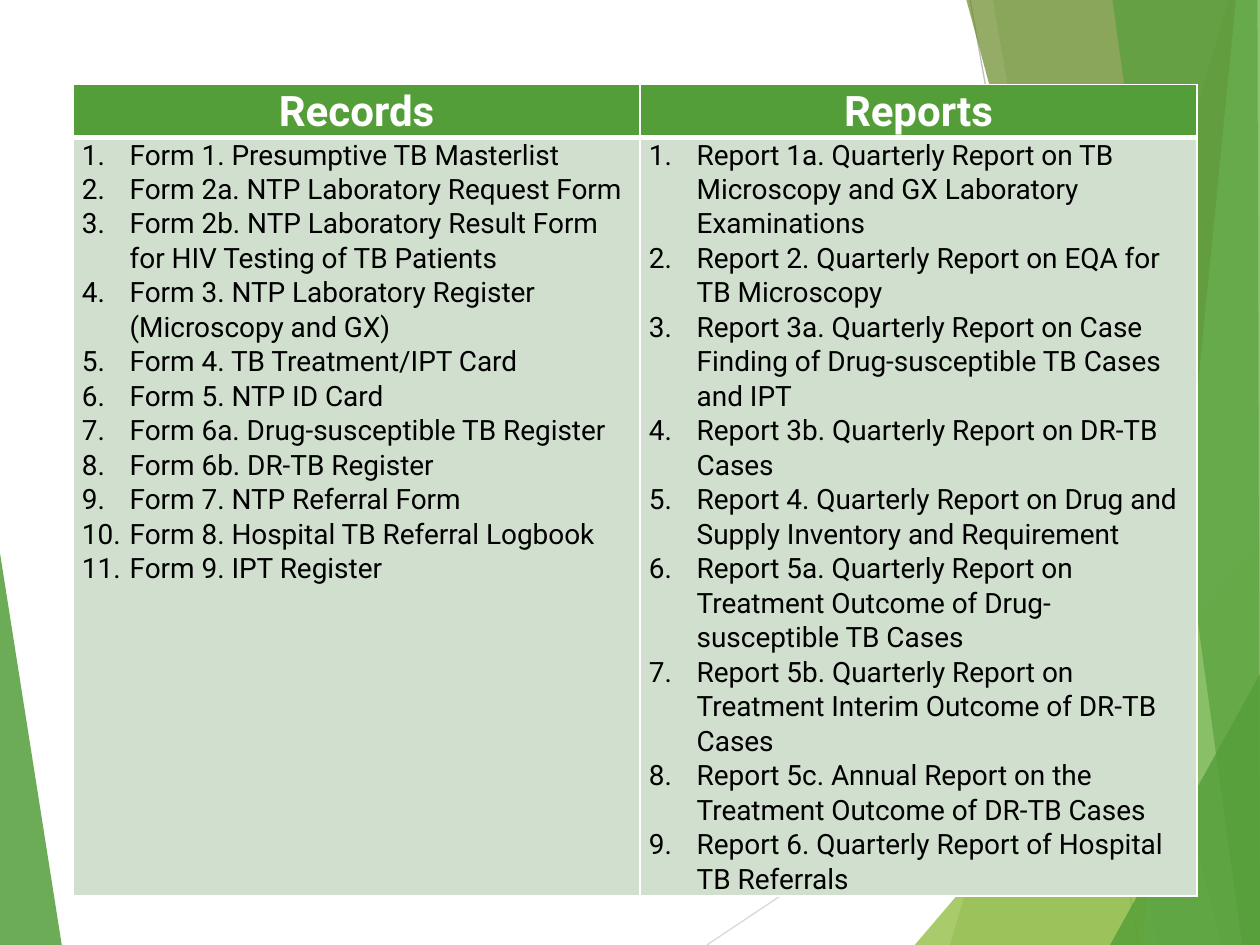
from lxml import etree
from pptx import Presentation
from pptx import util as u
from pptx.dml.color import RGBColor
from pptx.enum import shapes, text
from pptx.oxml.ns import qn

WIDTH, HEIGHT = 10, 7.5
FONT, WHITE = "Roboto", "FFFFFF"

# Content: column heading -> numbered entries
COLUMNS = {
    "Records": [
        "Form 1. Presumptive TB Masterlist",
        "Form 2a. NTP Laboratory Request Form",
        "Form 2b. NTP Laboratory Result Form for HIV Testing of TB Patients",
        "Form 3. NTP Laboratory Register (Microscopy and GX)",
        "Form 4. TB Treatment/IPT Card",
        "Form 5. NTP ID Card",
        "Form 6a. Drug-susceptible TB Register",
        "Form 6b. DR-TB Register",
        "Form 7. NTP Referral Form",
        "Form 8. Hospital TB Referral Logbook",
        "Form 9. IPT Register",
    ],
    "Reports": [
        "Report 1a. Quarterly Report on TB Microscopy and GX Laboratory Examinations",
        "Report 2. Quarterly Report on EQA for TB Microscopy",
        "Report 3a. Quarterly Report on Case Finding of Drug-susceptible TB Cases and IPT",
        "Report 3b. Quarterly Report on DR-TB Cases",
        "Report 4. Quarterly Report on Drug and Supply Inventory and Requirement",
        "Report 5a. Quarterly Report on Treatment Outcome of Drug- susceptible TB Cases",
        "Report 5b. Quarterly Report on Treatment Interim Outcome of DR-TB Cases",
        "Report 5c. Annual Report on the Treatment Outcome of DR-TB Cases",
        "Report 6. Quarterly Report of Hospital TB Referrals",
    ],
}
TABLE_LEFT, TABLE_TOP = 0.58, 0.67
COLUMN_WIDTHS, ROW_HEIGHTS = (4.5, 4.42), (0.4, 6.02)

# Row formats; borders are points for left, right, top, bottom
HEADER = dict(font=dict(size=u.Pt(24), bold=True), color=WHITE, fill="549E39",
              spacing=1.07, borders=(1, 1, 1, 3))
BODY = dict(font=dict(size=u.Pt(16), bold=False), color="000000", fill="D1DFCE",
            spacing=1.06, borders=(1, 1, 3, 1))

# Background facets: colour, opacity in percent, corners in inches
LEFT_FACET = ("549E39", 85, [(0, 4.39), (0.49, HEIGHT), (0, HEIGHT)])
RIGHT_FACETS = [
    ("549E39", 30, [(9.75, 0), (7.54, HEIGHT), (WIDTH, HEIGHT), (WIDTH, 0)]),
    ("549E39", 20, [(7.88, 0), (9.19, HEIGHT), (WIDTH, HEIGHT), (WIDTH, 0)]),
    ("8AB833", 72, [(7.26, HEIGHT), (WIDTH, 4.29), (WIDTH, HEIGHT)]),
    ("678A26", 70, [(7.67, 0), (9.7, HEIGHT), (WIDTH, HEIGHT), (WIDTH, 0)]),
    ("93D07D", 70, [(9.81, 0), (9.07, HEIGHT), (WIDTH, HEIGHT), (WIDTH, 0)]),
    ("549E39", 65, [(8.83, 0), (9.86, HEIGHT), (WIDTH, HEIGHT), (9.98, 0)]),
    ("549E39", 80, [(8.81, HEIGHT), (WIDTH, 5.35), (WIDTH, HEIGHT)]),
]
# Hairlines: colour, start, end
HAIRLINES = [
    ("D9D9D9", (5.61, HEIGHT), (WIDTH, 4.57)),
    ("BFBFBF", (7.7, 0), (9.04, HEIGHT)),
]


def rgb(value):
    return RGBColor.from_string(value)


def set_all(target, values):
    for name, value in values.items():
        setattr(target, name, value)


def add_facet(slide, color, opacity, corners):
    points = [(u.Inches(x), u.Inches(y)) for x, y in corners]
    builder = slide.shapes.build_freeform(*points[0])
    builder.add_line_segments(points[1:], close=True)
    shape = builder.convert_to_shape()
    shape.shadow.inherit = False
    shape.line.fill.background()
    shape.fill.solid()
    shape.fill.fore_color.rgb = rgb(color)
    color_node = next(shape._element.spPr.iter(qn("a:srgbClr")))
    etree.SubElement(color_node, qn("a:alpha"), val=str(opacity * 1000))


def add_hairline(slide, color, start, end):
    line = slide.shapes.add_connector(
        shapes.MSO_CONNECTOR.STRAIGHT, *(u.Inches(v) for v in start + end))
    line.line.color.rgb = rgb(color)
    line.line.width = u.Pt(0.75)
    etree.SubElement(line._element.spPr, qn("a:effectLst"))


def set_borders(cell, widths):
    properties = cell._tc.get_or_add_tcPr()
    for index, (side, width) in enumerate(zip("LRTB", widths)):
        border = etree.Element(qn(f"a:ln{side}"), w=str(u.Pt(width)))
        fill = etree.SubElement(border, qn("a:solidFill"))
        etree.SubElement(fill, qn("a:srgbClr"), val=WHITE)
        properties.insert(index, border)


def number(paragraph):
    properties = paragraph._p.get_or_add_pPr()
    indent = u.Inches(0.38)
    properties.set("marL", str(indent))
    properties.set("indent", str(-indent))
    etree.SubElement(properties, qn("a:buFont"), typeface=FONT)
    etree.SubElement(properties, qn("a:buAutoNum"), type="arabicPeriod")


def fill_cell(cell, lines, style):
    set_all(cell, dict(margin_left=u.Inches(0.07), margin_right=u.Inches(0.07),
                       margin_top=0, margin_bottom=0))
    cell.fill.solid()
    cell.fill.fore_color.rgb = rgb(style["fill"])
    set_borders(cell, style["borders"])
    cell.text_frame.text = "\n".join(lines)
    for paragraph in cell.text_frame.paragraphs:
        paragraph.line_spacing = style["spacing"]
        font = paragraph.runs[0].font
        set_all(font, dict(style["font"], name=FONT))
        font.color.rgb = rgb(style["color"])


def add_forms_table(slide):
    frame = slide.shapes.add_table(
        len(ROW_HEIGHTS), len(COLUMNS), u.Inches(TABLE_LEFT), u.Inches(TABLE_TOP),
        u.Inches(sum(COLUMN_WIDTHS)), u.Inches(sum(ROW_HEIGHTS)))
    table = frame.table
    for row, height in zip(table.rows, ROW_HEIGHTS):
        row.height = u.Inches(height)
    for index, (heading, entries) in enumerate(COLUMNS.items()):
        table.columns[index].width = u.Inches(COLUMN_WIDTHS[index])
        header, body = table.cell(0, index), table.cell(1, index)
        fill_cell(header, [heading], HEADER)
        header.text_frame.paragraphs[0].alignment = text.PP_ALIGN.CENTER
        fill_cell(body, entries, BODY)
        for paragraph in body.text_frame.paragraphs:
            number(paragraph)


def main():
    presentation = Presentation()
    set_all(presentation, dict(slide_width=u.Inches(WIDTH), slide_height=u.Inches(HEIGHT)))
    slide = presentation.slides.add_slide(presentation.slide_layouts[6])

    # Background, back to front
    add_facet(slide, *LEFT_FACET)
    for hairline in HAIRLINES:
        add_hairline(slide, *hairline)
    for facet in RIGHT_FACETS:
        add_facet(slide, *facet)

    # Forms and reports
    add_forms_table(slide)
    presentation.save("out.pptx")


if __name__ == "__main__":
    main()
